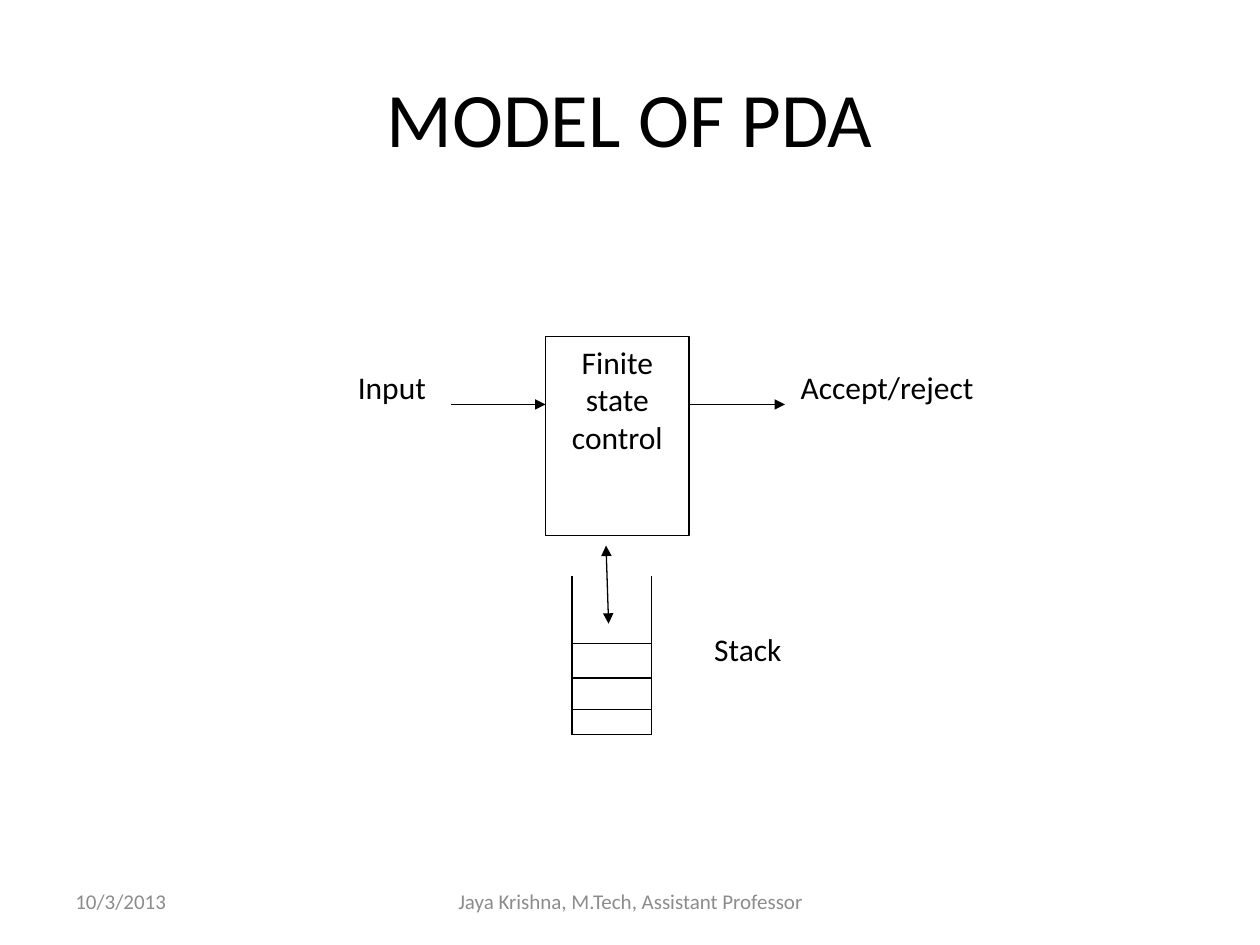
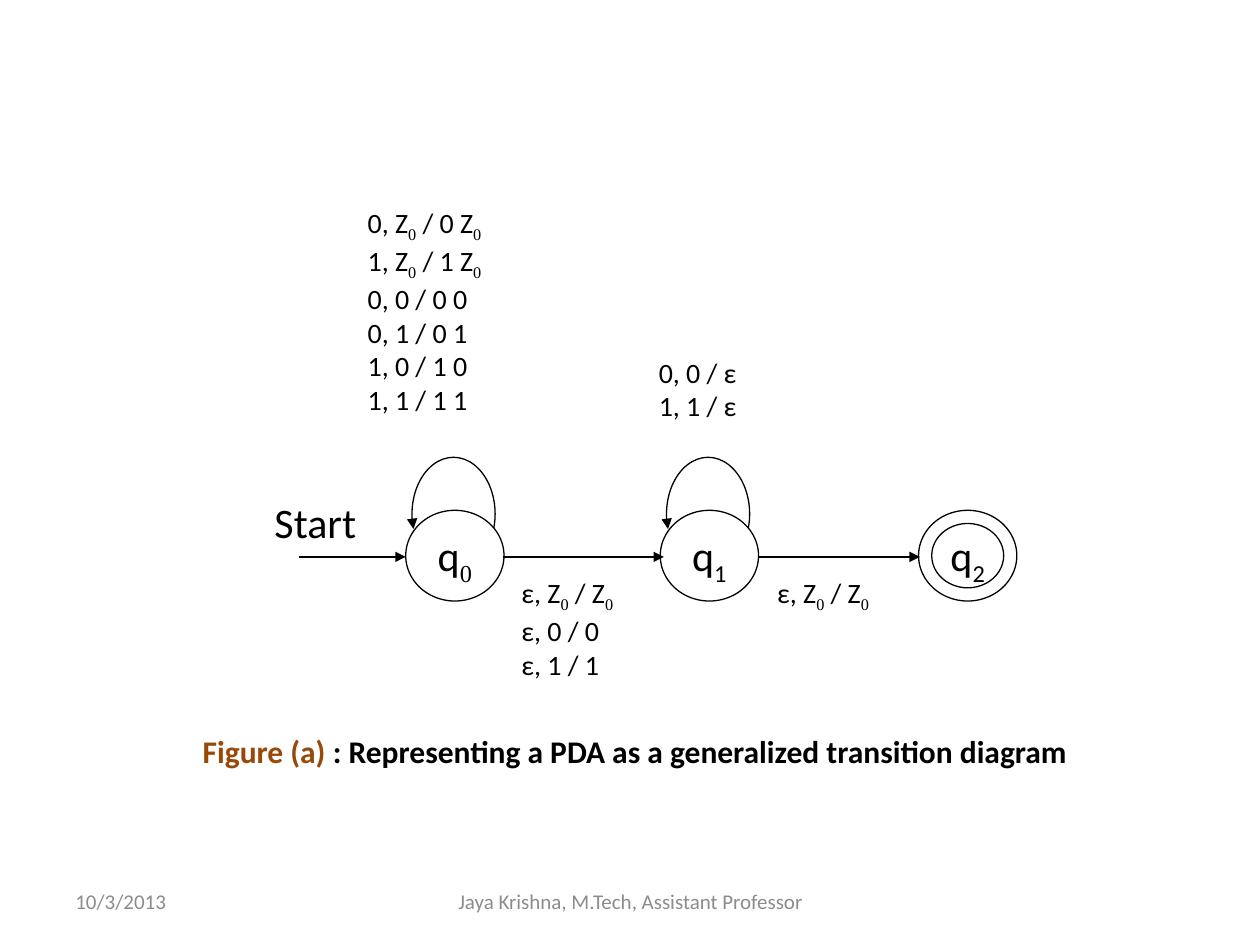
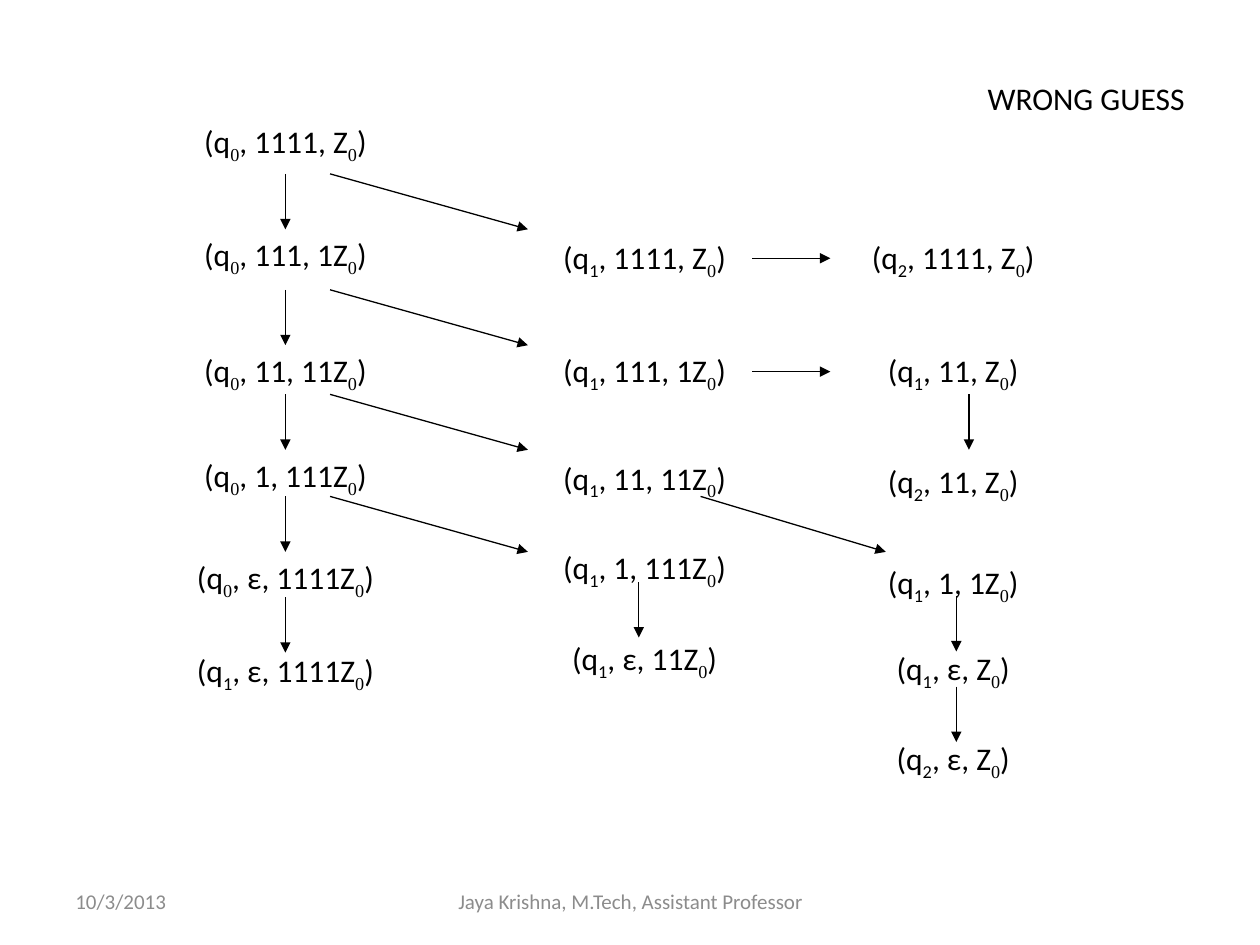
from dataclasses import dataclass

from lxml import etree
from pptx import Presentation
from pptx.dml.color import RGBColor
from pptx.enum import shapes, text
from pptx.oxml import ns
from pptx.slide import Slide
from pptx.util import Inches, Pt

COLORS = {"ink": "000000", "paper": "FFFFFF", "footer": "8C8C8C", "figure": "984807"}
FONT, ZERO_FONT = "Calibri", "Times New Roman"
LINE_WIDTH = 0.75
CENTER, LEFT = text.PP_ALIGN.CENTER, text.PP_ALIGN.LEFT
TOP, MIDDLE = text.MSO_ANCHOR.TOP, text.MSO_ANCHOR.MIDDLE
SHAPE = shapes.MSO_SHAPE


def rgb(name):
    return RGBColor.from_string(COLORS[name])


def add_run(paragraph, words, size, color="ink", bold=False, subscript=False):
    run = paragraph.add_run()
    run.text = words
    run.font.name = ZERO_FONT if subscript and words == "0" else FONT
    run.font.size = Pt(size)
    run.font.bold = bold
    run.font.color.rgb = rgb(color)
    if subscript:
        run.font._element.set("baseline", "-25000")


def add_notation(paragraph, notation, size, color="ink"):
    """Write text in which the character after each underscore is a subscript."""
    first, *rest = notation.split("_")
    if first:
        add_run(paragraph, first, size, color)
    for part in rest:
        add_run(paragraph, part[0], size, color, subscript=True)
        if part[1:]:
            add_run(paragraph, part[1:], size, color)


def write_lines(frame, lines, size, align, color="ink", anchor=TOP):
    frame.word_wrap = True
    frame.vertical_anchor = anchor
    for number, line in enumerate(lines):
        paragraph = frame.add_paragraph() if number else frame.paragraphs[0]
        paragraph.alignment = align
        add_notation(paragraph, line, size, color)


def set_arrowheads(line, *ends):
    """Add triangles at the given ends, headEnd before tailEnd."""
    for end in ends:
        etree.SubElement(line._get_or_add_ln(), ns.qn(f"a:{end}"), type="triangle")


@dataclass
class Region:
    """Part of a slide; lengths are inches from its left top corner."""
    slide: Slide
    left: float
    top: float

    def point(self, x, y):
        return Inches(self.left + x), Inches(self.top + y)

    def text_box(self, x, y, width, height):
        return self.slide.shapes.add_textbox(
            *self.point(x, y), Inches(width), Inches(height)).text_frame

    def shape(self, kind, x, y, width, height, filled=True, outlined=True):
        shape = self.slide.shapes.add_shape(
            kind, *self.point(x, y), Inches(width), Inches(height))
        shape.shadow.inherit = False
        if filled:
            shape.fill.solid()
            shape.fill.fore_color.rgb = rgb("paper")
        else:
            shape.fill.background()
        if outlined:
            shape.line.color.rgb = rgb("ink")
            shape.line.width = Pt(LINE_WIDTH)
        else:
            shape.line.fill.background()
        return shape

    def label(self, lines, x, y, width, height, size=18, align=LEFT, outlined=False):
        box = self.shape(SHAPE.RECTANGLE, x, y, width, height, outlined=outlined)
        write_lines(box.text_frame, lines, size, align)
        return box

    def line(self, x1, y1, x2, y2, *ends):
        connector = self.slide.shapes.add_connector(
            shapes.MSO_CONNECTOR.STRAIGHT, *self.point(x1, y1), *self.point(x2, y2))
        connector.line.color.rgb = rgb("ink")
        connector.line.width = Pt(LINE_WIDTH)
        set_arrowheads(connector.line, *ends)
        etree.SubElement(connector._element.spPr, ns.qn("a:effectLst"))
        return connector

    def arrow(self, x1, y1, x2, y2):
        return self.line(x1, y1, x2, y2, "tailEnd")


def add_title(slide, title):
    frame = Region(slide, 0.5, 0.3).text_box(0, 0, 9, 1.25)
    write_lines(frame, [title], 44, CENTER, anchor=MIDDLE)


def add_footer(slide):
    footer = Region(slide, 0.5, 6.95)
    for words, x, width, align in (
            ("10/3/2013", 0, 2.33, LEFT),
            ("Jaya Krishna, M.Tech, Assistant Professor", 2.92, 3.17, CENTER)):
        write_lines(footer.text_box(x, 0, width, 0.4), [words], 12, align,
                    "footer", MIDDLE)


def draw_control(region):
    """Finite control with its input and its verdict."""
    region.label(["Finite state control"], 1.83, 0, 1.14, 1.58,
                 align=CENTER, outlined=True)
    region.label(["Input"], 0, 0.2, 1.22, 0.53, align=CENTER)
    region.label(["Accept/reject"], 3.74, 0.2, 1.6, 0.53, align=CENTER)
    region.arrow(1.08, 0.54, 1.83, 0.54)
    region.arrow(2.97, 0.54, 3.73, 0.54)


def draw_stack(region):
    width, height = 0.63, 1.26
    for x in (0, width):
        region.line(x, 0, x, height)
    for y in (0.54, 0.81, 1.06, height):
        region.line(0, y, width, y)
    region.line(0.27, -0.24, 0.29, 0.38, "headEnd", "tailEnd")
    region.label(["Stack"], 1.03, 0.38, 0.85, 0.67)


def draw_state(region, name, x, y, accepting=False):
    state = region.shape(SHAPE.DONUT if accepting else SHAPE.OVAL, x, y, 0.78, 0.72)
    if accepting:
        state.adjustments[0] = 0.145
    write_lines(state.text_frame, [name], 24, CENTER)


def draw_loop(region, x, y):
    """Arrow that leaves a state on its right and comes back on its left."""
    loop = region.shape(SHAPE.ARC, x, y, 0.66, 0.9, filled=False)
    for index, degrees in enumerate((159.4, 19)):
        loop.adjustments[index] = degrees * 0.6
    set_arrowheads(loop.line, "headEnd")


def draw_transitions(region):
    state_top, arrow_y = 2.47, 2.84
    for name, x in (("q_0", 1.97), ("q_1", 3.99)):
        draw_state(region, name, x, state_top)
        draw_loop(region, x + 0.05, state_top - 0.42)
    draw_state(region, "q_2", 6.04, state_top, accepting=True)
    for start, end in ((1.12, 1.97), (2.74, 4.02), (4.77, 6.05)):
        region.arrow(start, arrow_y, end, arrow_y)

    region.label(["Start"], 0.83, 2.31, 0.98, 0.43, size=24)
    pushes = ["0, Z_0 / 0 Z_0", "1, Z_0 / 1 Z_0",
              "0, 0 / 0 0", "0, 1 / 0 1", "1, 0 / 1 0", "1, 1 / 1 1"]
    region.label(pushes, 1.57, 0, 1.3, 1.94, size=16)
    region.label(["0, 0 / ε", "1, 1 / ε"], 3.88, 1.19, 1.02, 0.75, size=16)
    region.label(["ε, Z_0 / Z_0", "ε, 0 / 0", "ε, 1 / 1"],
                 2.79, 2.94, 1.14, 1.12, size=16)
    region.label(["ε, Z_0 / Z_0"], 4.82, 2.94, 1.14, 0.44, size=16)


def draw_caption(region):
    frame = region.text_box(0, 0, 7.58, 0.4)
    frame.word_wrap = True
    caption = frame.paragraphs[0]
    caption.alignment = CENTER
    add_run(caption, "Figure (a)", 18, "figure", bold=True)
    add_run(caption, " : Representing a PDA as a generalized transition diagram",
            18, bold=True)


def draw_configurations(region):
    """Tree of moves on 1111: pushing on the left, popping to the right."""
    width, height, step = 1.69, 0.34, 0.44
    columns = (
        (0, ((0, "(q_0, 1111, Z_0)"), (0.9, "(q_0, 111, 1Z_0)"),
             (1.82, "(q_0, 11, 11Z_0)"), (2.65, "(q_0, 1, 111Z_0)"),
             (3.46, "(q_0, ε, 1111Z_0)"), (4.2, "(q_1, ε, 1111Z_0)"))),
        (2.85, ((0.92, "(q_1, 1111, Z_0)"), (1.82, "(q_1, 111, 1Z_0)"),
                (2.67, "(q_1, 11, 11Z_0)"), (3.38, "(q_1, 1, 111Z_0)"),
                (4.1, "(q_1, ε, 11Z_0)"))),
        (5.3, ((0.92, "(q_2, 1111, Z_0)"), (1.82, "(q_1, 11, Z_0)"),
               (2.7, "(q_2, 11, Z_0)"), (3.5, "(q_1, 1, 1Z_0)"),
               (4.18, "(q_1, ε, Z_0)"), (4.9, "(q_2, ε, Z_0)"))),
    )
    pushing, _, _ = [
        [region.label([notation], x, y, width, height, align=CENTER)
         for y, notation in moves]
        for x, moves in columns]

    for (y, _), pushed in zip(columns[0][1][1:5], pushing[1:5]):
        region.arrow(width / 2, y - step, width / 2, y).end_connect(pushed, 0)
        region.arrow(1.2, y - step, 2.77, y)
    for x, y in ((width / 2, 3.82), (3.65, 3.7),
                 (6.27, 2.21), (6.17, 3.81), (6.17, 4.53)):
        region.arrow(x, y, x, y + step)
    for y in (1.13, 2.03):
        region.arrow(4.55, y, 5.17, y)
    region.arrow(4.14, 3.02, 5.61, 3.02 + step)


def draw_verdict(region):
    write_lines(region.text_box(0, 0, 2.08, 0.4), ["WRONG GUESS"], 18, CENTER)


def main():
    deck = Presentation()
    deck.slide_width, deck.slide_height = Inches(10), Inches(7.5)
    blank = deck.slide_layouts[6]
    model, diagram, moves = [deck.slides.add_slide(blank) for _ in range(3)]
    for slide in (model, diagram, moves):
        add_footer(slide)

    add_title(model, "MODEL OF PDA")
    draw_control(Region(model, 2.5, 2.67))
    draw_stack(Region(model, 4.54, 4.57))

    draw_transitions(Region(diagram, 1.25, 1.58))
    draw_caption(Region(diagram, 1.25, 5.76))

    draw_configurations(Region(moves, 1.42, 0.92))
    draw_verdict(Region(moves, 7.58, 0.58))
    deck.save("out.pptx")


if __name__ == "__main__":
    main()
